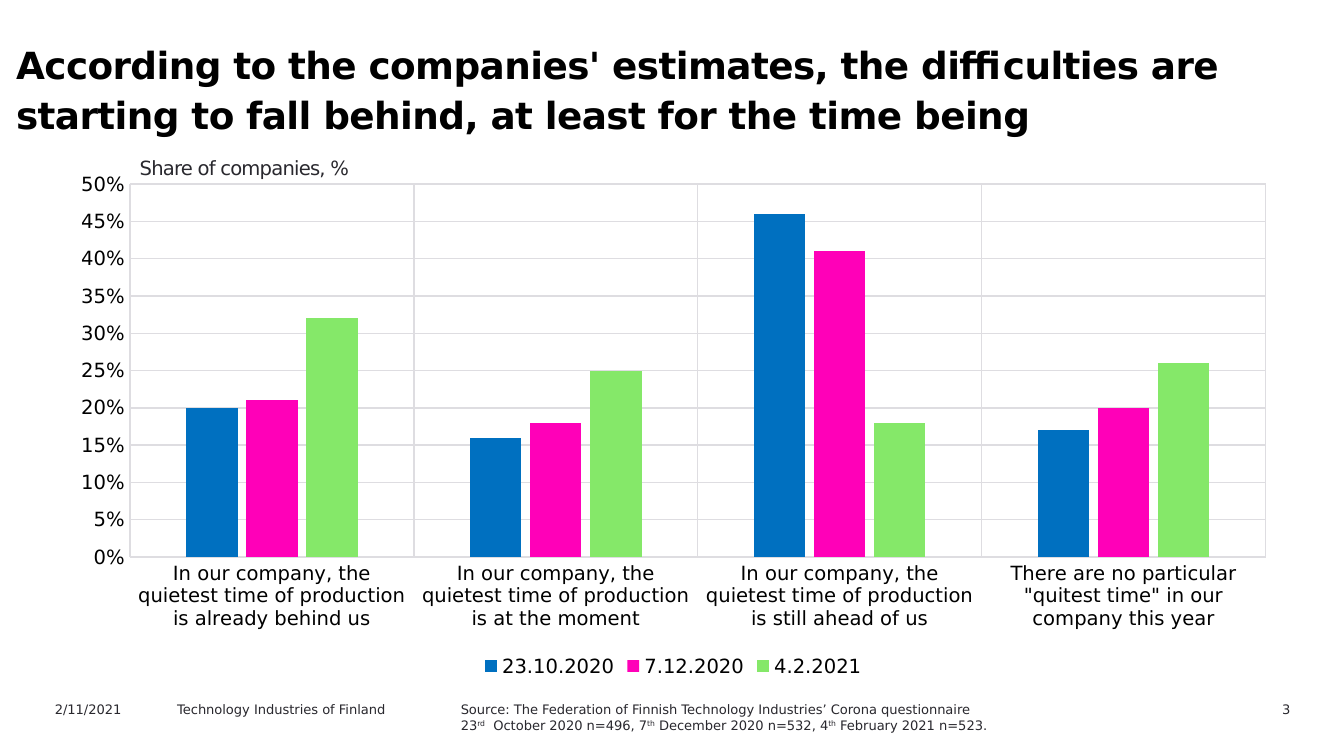
"""Build the slide on when companies expect their quietest time of production."""
from pptx import Presentation
from pptx.chart.data import CategoryChartData
from pptx.dml.color import RGBColor
from pptx.enum.chart import XL_CHART_TYPE as ChartType, XL_LEGEND_POSITION as LegendPosition
from pptx.enum.chart import XL_TICK_MARK as TickMark
from pptx.enum.text import PP_ALIGN as Align
from pptx.util import Inches, Pt

FONT = "DejaVu Sans"
BLACK, INK, GRID = "000000", "29282E", "DEDDE1"

HEADLINE = ("According to the companies' estimates, the difficulties are "
            "starting to fall behind, at least for the time being")
UNIT = "Share of companies, %"
SOURCE = [
    [("Source: The Federation of Finnish Technology Industries’ Corona questionnaire", 0)],
    [("23", 0), ("rd", 30), ("  October 2020 n=496, 7", 0), ("th", 30),
     (" December 2020 n=532, 4", 0), ("th", 30), (" February 2021 n=523.", 0)],
]
FOOTER = [
    ((0.31, 5.17, 1, 0.18), [[("2/11/2021", 0)]], Align.LEFT),
    ((1.22, 5.17, 1.94, 0.18), [[("Technology Industries of Finland", 0)]], Align.LEFT),
    ((3.33, 5.17, 4.58, 0.4), SOURCE, Align.LEFT),
    ((8.76, 5.17, 0.94, 0.18), [[("3", 0)]], Align.RIGHT),
]
ANSWERS = [
    "In our company, the quietest time of production is already behind us",
    "In our company, the quietest time of production is at the moment",
    "In our company, the quietest time of production is still ahead of us",
    'There are no particular "quitest time" in our company this year',
]
SURVEYS = [
    ("23.10.2020", "0070C0", (0.20, 0.16, 0.46, 0.17)),
    ("7.12.2020", "FF00B8", (0.21, 0.18, 0.41, 0.20)),
    ("4.2.2021", "85E869", (0.32, 0.25, 0.18, 0.26)),
]


def rgb(value):
    """Turn a hex string into a colour."""
    return RGBColor.from_string(value)


def style(font, size, color, bold=False):
    """Set typeface, size, colour and weight."""
    font.name, font.size, font.bold = FONT, Pt(size), bold
    font.color.rgb = rgb(color)


def draw_line(line_format):
    """Give an axis or gridline its thin grey line."""
    line_format.line.color.rgb = rgb(GRID)
    line_format.line.width = Pt(0.75)


def add_text(slide, box, lines, size, color=INK, bold=False, align=Align.LEFT, spacing=0):
    """Add a text box from lines of (text, baseline) and return its frame."""
    frame = slide.shapes.add_textbox(*map(Inches, box)).text_frame
    frame.word_wrap = True
    for index, line in enumerate(lines):
        paragraph = frame.add_paragraph() if index else frame.paragraphs[0]
        paragraph.alignment = align
        style(paragraph.font, size, color, bold)
        for text, baseline in line:
            run = paragraph.add_run()
            run.text = text
            properties = run._r.get_or_add_rPr()
            if baseline:
                properties.set("baseline", str(baseline * 1000))
            if spacing:
                properties.set("spc", str(round(spacing * 100)))
    return frame


def add_survey_chart(slide):
    """Add the clustered columns comparing the three surveys."""
    data = CategoryChartData(number_format="0%")
    data.categories = ANSWERS
    for date, _, shares in SURVEYS:
        data.add_series(date, shares)
    box = map(Inches, (0.42, 1.21, 9.18, 3.87))
    chart = slide.shapes.add_chart(ChartType.COLUMN_CLUSTERED, *box, data).chart
    style(chart.font, 10, INK)
    chart.has_title = False

    plot = chart.plots[0]
    plot.gap_width, plot.overlap, plot.vary_by_categories = 219, -17, False
    for series, (_, color, _) in zip(plot.series, SURVEYS):
        series.format.fill.solid()
        series.format.fill.fore_color.rgb = rgb(color)

    for axis in (chart.category_axis, chart.value_axis):
        axis.major_tick_mark = axis.minor_tick_mark = TickMark.NONE
        axis.has_major_gridlines = True
        draw_line(axis.major_gridlines.format)
        style(axis.tick_labels.font, 10.5, BLACK)
    draw_line(chart.category_axis.format)

    shares_axis = chart.value_axis
    shares_axis.minimum_scale, shares_axis.maximum_scale = 0, 0.5
    shares_axis.major_unit = 0.05
    shares_axis.format.line.fill.background()
    shares_axis.tick_labels.number_format = "0%"
    shares_axis.tick_labels.number_format_is_linked = False

    chart.has_legend = True
    chart.legend.position = LegendPosition.BOTTOM
    chart.legend.include_in_layout = False
    style(chart.legend.font, 10.5, BLACK)


def main():
    """Build and save the slide."""
    deck = Presentation()
    deck.slide_width = Inches(10)
    deck.slide_height = deck.slide_width * 9 // 16
    slide = deck.slides.add_slide(deck.slide_layouts[6])

    headline = add_text(slide, (0, 0.22, 9.18, 0.9), [[(HEADLINE, 0)]], 20, BLACK,
                        bold=True, spacing=-0.33)
    headline.paragraphs[0].line_spacing = Pt(27)
    headline.margin_left = Inches(0.12)

    for box, lines, align in FOOTER:
        add_text(slide, box, lines, 7, align=align)

    unit = add_text(slide, (1, 1.12, 7.07, 0.26), [[(UNIT, 0)]], 10.5, spacing=-0.4)
    unit.margin_left = unit.margin_right = Inches(0.04)
    unit.margin_top = unit.margin_bottom = Inches(0.04)

    add_survey_chart(slide)
    deck.save("out.pptx")


if __name__ == "__main__":
    main()
